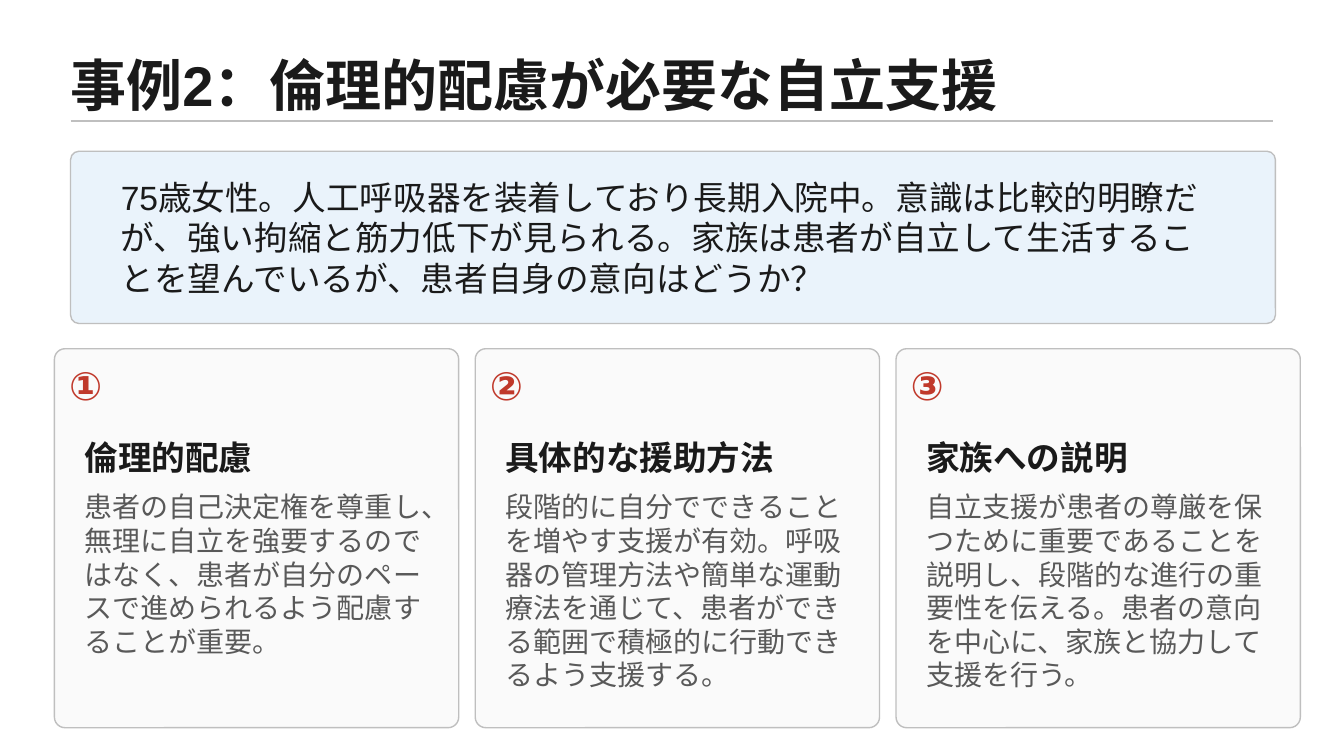
from dataclasses import dataclass

from lxml import etree
from pptx import Presentation
from pptx import util as u
from pptx.dml.color import RGBColor
from pptx.enum import shapes, text
from pptx.oxml import ns

SLIDE_W, SLIDE_H = u.Inches(13.33), u.Inches(7.5)
FONT = "Arial"
INK = RGBColor(0x1A, 0x1A, 0x1A)
GREY = RGBColor(0x59, 0x59, 0x59)
RULE = RGBColor(0xBF, 0xBF, 0xBF)
RED = RGBColor(0xC0, 0x39, 0x2B)
CASE_BLUE = RGBColor(0xEA, 0xF3, 0xFB)
CARD_FILL = RGBColor(0xFA, 0xFA, 0xFA)


@dataclass(frozen=True)
class Area:
    """Position and size in percent of the slide's width and height."""
    x: float
    y: float
    w: float
    h: float

    def emu(self) -> tuple[int, int, int, int]:
        return across(self.x), down(self.y), across(self.w), down(self.h)

    def inner(self, dx: float, dy: float, w: float, h: float) -> "Area":
        return Area(self.x + dx, self.y + dy, w, h)


@dataclass(frozen=True)
class Style:
    size: int
    color: RGBColor
    bold: bool = False
    anchor: text.MSO_ANCHOR = text.MSO_ANCHOR.MIDDLE
    align: text.PP_ALIGN = text.PP_ALIGN.LEFT


@dataclass(frozen=True)
class Point:
    number: str
    heading: str
    body: str


TITLE = Style(40, INK, bold=True)
CASE = Style(24, INK)
NUMBER = Style(28, RED, bold=True, align=text.PP_ALIGN.CENTER)
HEADING = Style(24, INK, bold=True)
BODY = Style(20, GREY, anchor=text.MSO_ANCHOR.TOP)

POINTS = [
    Point("①", "倫理的配慮",
          "患者の自己決定権を尊重し、無理に自立を強要するのではなく、"
          "患者が自分のペースで進められるよう配慮することが重要。"),
    Point("②", "具体的な援助方法",
          "段階的に自分でできることを増やす支援が有効。呼吸器の管理方法や簡単な"
          "運動療法を通じて、患者ができる範囲で積極的に行動できるよう支援する。"),
    Point("③", "家族への説明",
          "自立支援が患者の尊厳を保つために重要であることを説明し、段階的な進行の"
          "重要性を伝える。患者の意向を中心に、家族と協力して支援を行う。"),
]
FIRST_CARD = Area(4.05, 46.13, 30.08, 50.13)
CARD_PITCH = 31.31


def across(percent: float) -> int:
    return round(SLIDE_W * percent / 100)


def down(percent: float) -> int:
    return round(SLIDE_H * percent / 100)


def add_words(slide, area: Area, words: str, style: Style, inset: bool = True) -> None:
    frame = slide.shapes.add_textbox(*area.emu()).text_frame
    frame.word_wrap = True
    frame.vertical_anchor = style.anchor
    if not inset:
        frame.margin_left = frame.margin_right = 0
        frame.margin_top = frame.margin_bottom = 0
    line = frame.paragraphs[0]
    line.alignment = style.align
    run = line.add_run()
    run.text = words
    run.font.name = FONT
    run.font.size = u.Pt(style.size)
    run.font.bold = style.bold
    run.font.color.rgb = style.color


def add_panel(slide, area: Area, fill: RGBColor, rounding: float) -> None:
    panel = slide.shapes.add_shape(shapes.MSO_SHAPE.ROUNDED_RECTANGLE, *area.emu())
    panel.adjustments[0] = rounding
    panel.shadow.inherit = False
    panel.fill.solid()
    panel.fill.fore_color.rgb = fill
    panel.line.color.rgb = RULE
    panel.line.width = u.Pt(1)


def add_rule(slide, left: float, right: float, y: float) -> None:
    rule = slide.shapes.add_connector(
        shapes.MSO_CONNECTOR.STRAIGHT, across(left), down(y), across(right), down(y))
    rule.line.color.rgb = RULE
    rule.line.width = u.Pt(1)
    etree.SubElement(rule._element.spPr, ns.qn("a:effectLst"))


def add_card(slide, card: Area, point: Point) -> None:
    add_panel(slide, card, CARD_FILL, 0.028)
    add_words(slide, card.inner(0, 0, 4.65, 9.47), point.number, NUMBER)
    add_words(slide, card.inner(1.5, 8.67, 26.7, 11.2), point.heading, HEADING)
    add_words(slide, card.inner(1.5, 18, 26.7, 24.27), point.body, BODY)


def main() -> None:
    deck = Presentation()
    deck.slide_width, deck.slide_height = SLIDE_W, SLIDE_H
    slide = deck.slides.add_slide(deck.slide_layouts[6])

    # Title and rule
    add_words(slide, Area(5.25, 5.6, 89.5, 10.93),
              "事例2：倫理的配慮が必要な自立支援", TITLE, inset=False)
    add_rule(slide, 5.25, 94.75, 16)

    # Case description
    add_panel(slide, Area(5.25, 20, 89.65, 22.8), CASE_BLUE, 0.05)
    add_words(slide, Area(8.25, 20, 83.65, 22.8),
              "75歳女性。人工呼吸器を装着しており長期入院中。意識は比較的明瞭だが、"
              "強い拘縮と筋力低下が見られる。家族は患者が自立して生活することを"
              "望んでいるが、患者自身の意向はどうか？", CASE)

    # Three cards
    for column, point in enumerate(POINTS):
        card = FIRST_CARD.inner(column * CARD_PITCH, 0, FIRST_CARD.w, FIRST_CARD.h)
        add_card(slide, card, point)

    deck.save("out.pptx")


if __name__ == "__main__":
    main()
